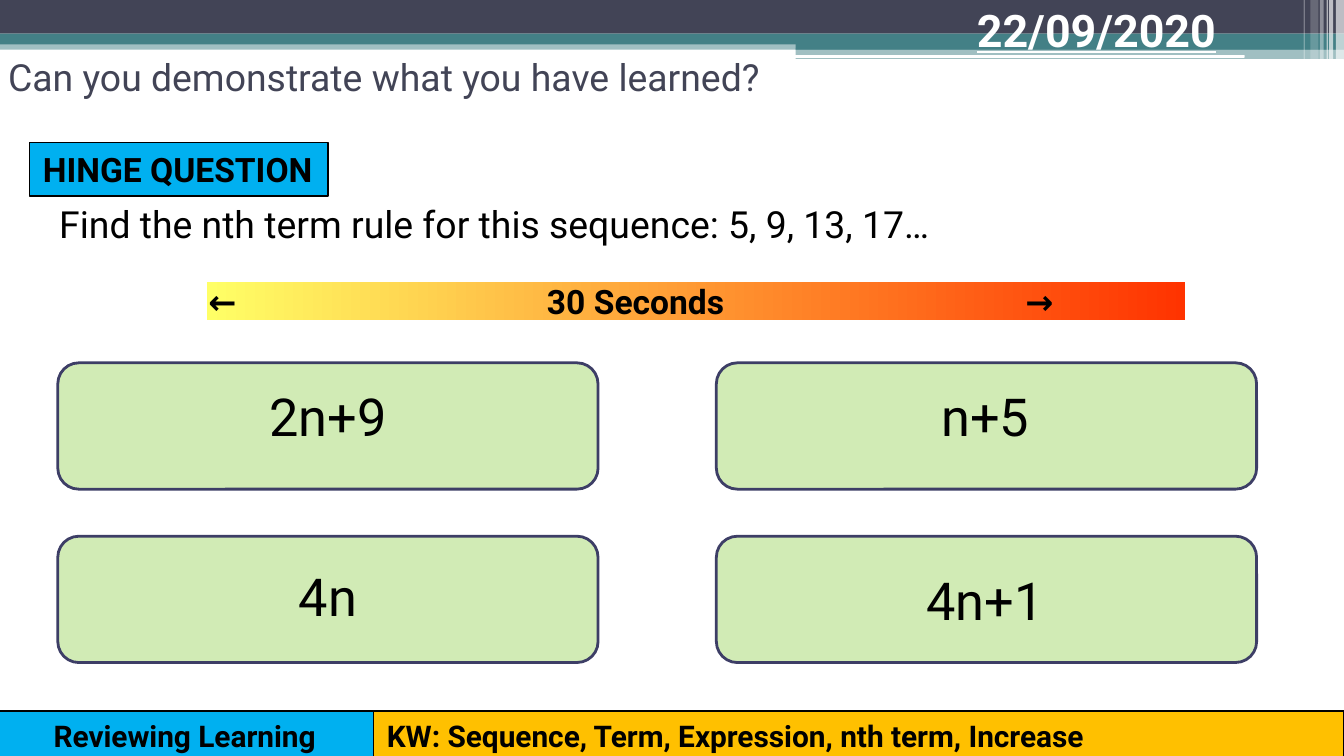
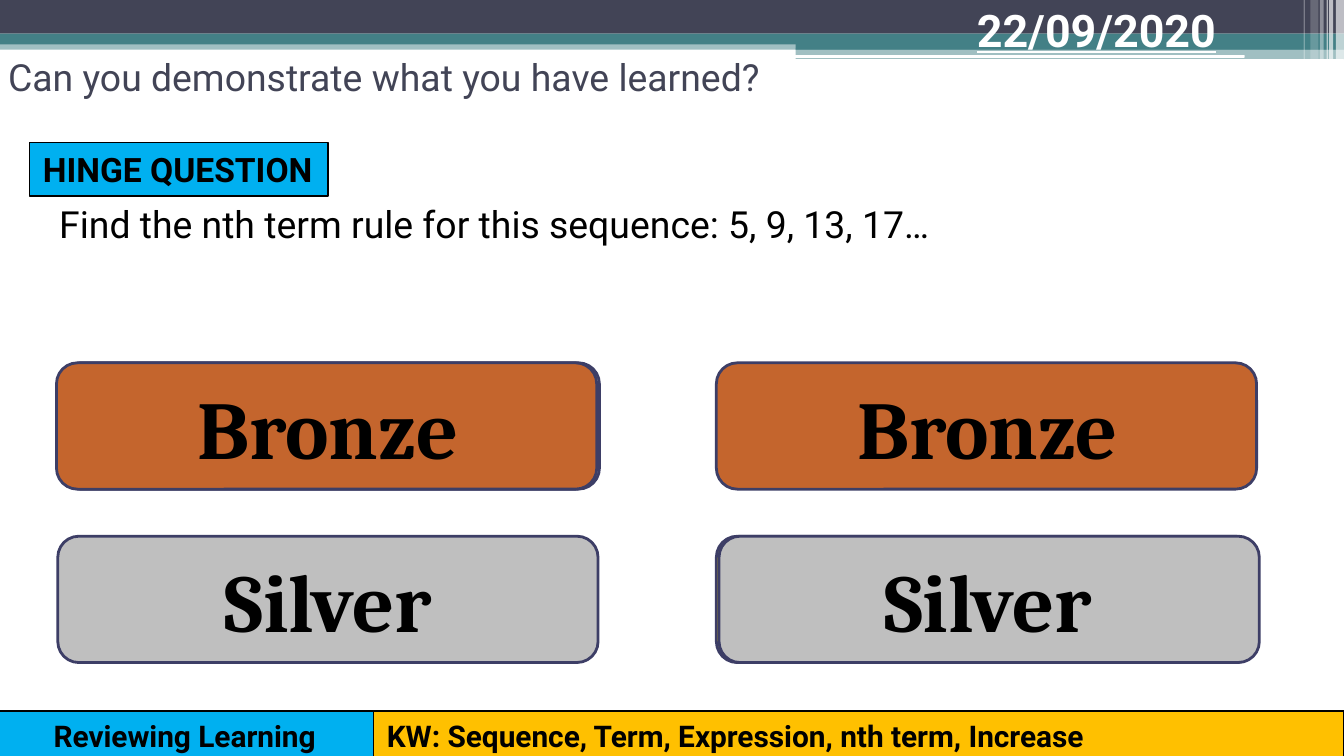
import pptx
import pptx.dml.color
import pptx.enum.shapes
import pptx.enum.text
import pptx.oxml.ns
import pptx.util
import lxml.etree

PX = 9144  # one px is a hundredth of an inch
RECT = pptx.enum.shapes.MSO_SHAPE.RECTANGLE
ROUND = pptx.enum.shapes.MSO_SHAPE.ROUNDED_RECTANGLE
LEFT = pptx.enum.text.PP_ALIGN.LEFT
MID = pptx.enum.text.PP_ALIGN.CENTER
TOP = pptx.enum.text.MSO_ANCHOR.TOP
CENTER = pptx.enum.text.MSO_ANCHOR.MIDDLE

# Shared colours and fonts
BLACK, WHITE = "000000", "FFFFFF"
SLATE, TEAL, NAVY = "424456", "438086", "3D3E66"
BLUE, AMBER, GREEN = "00B0F0", "FFC000", "92D050"
BRONZE, SILVER, GOLD = "C4652D", "BFBFBF", "D5B809"
SANS, SERIF = "Roboto", "Cambria"

# Header stripes: left, top, width, height, colour, opacity in percent
BANDS = [
    (0, 30, 1000, 7, TEAL, 50),
    (0, 0, 1000, 25, SLATE, 100),
    (0, 25, 1000, 8, TEAL, 100),
    (592, 30, 408, 7, TEAL, 100),
    (592, 36, 408, 15, TEAL, 50),
]
# Upright stripes at the right end: left, width, height, opacity
BARS = [(994, 6, 51, 65), (989, 3, 51, 65), (987, 1, 51, 60),
        (982, 3, 51, 40), (975, 6, 48, 20), (970, 1, 48, 30)]

# Answer cards
LEFTS, TOPS = (43, 533), (270, 399)
WIDE, HIGH = 402, 94


def emu(*nums):
    return [pptx.util.Emu(num * PX) for num in nums]


def rgb(code):
    return pptx.dml.color.RGBColor.from_string(code)


def node(parent, tag, **attrs):
    item = lxml.etree.SubElement(parent, pptx.oxml.ns.qn(tag))
    for key, val in attrs.items():
        item.set(key, str(val))
    return item


def write(frame, text, size, color=BLACK, face=SANS, bold=False,
          align=LEFT, anchor=TOP):
    """Fill a text frame with one evenly formatted paragraph."""
    frame.word_wrap = True
    frame.auto_size = pptx.enum.text.MSO_AUTO_SIZE.NONE
    frame.vertical_anchor = anchor
    para = frame.paragraphs[0]
    para.text = text
    para.alignment = align
    font = para.font
    font.size, font.name, font.bold = pptx.util.Pt(size), face, bold
    font.color.rgb = rgb(color)
    return para


def block(slide, box, fill, line=None, width=0.75, kind=RECT, alpha=100):
    shape = slide.shapes.add_shape(kind, *emu(*box))
    shape.shadow.inherit = False
    shape.fill.solid()
    shape.fill.fore_color.rgb = rgb(fill)
    if alpha < 100:
        solid = shape.fill.fore_color._xFill
        node(solid[0], "a:alpha", val=alpha * 1000)
    if line:
        shape.line.color.rgb = rgb(line)
        shape.line.width = pptx.util.Pt(width)
    else:
        shape.line.fill.background()
    return shape


def label(slide, box, text, size, **style):
    shape = slide.shapes.add_textbox(*emu(*box))
    return write(shape.text_frame, text, size, **style)


def tag(slide, box, fill, text, size, align=LEFT):
    shape = block(slide, box, fill, BLACK)
    write(shape.text_frame, text, size, bold=True, align=align)


def card(slide, left, top, fill, alpha=100):
    block(slide, (left, top, WIDE, HIGH), fill, NAVY, 1.5, ROUND, alpha)


def place(holder, *box):
    holder.left, holder.top, holder.width, holder.height = emu(*box)


def header(slide, layout):
    """Draw the header stripes and move them onto the layout."""
    parts = [block(slide, band[:4], band[4], alpha=band[5]) for band in BANDS]
    parts.append(block(slide, (591, 41, 335, 2), WHITE, kind=ROUND))
    parts += [block(slide, (left, 0, wide, high), WHITE, alpha=alpha)
              for left, wide, high, alpha in BARS]
    for part in parts:
        layout.shapes._spTree.append(part._element)


def frame(slide):
    """Add the title, question, date and footer that every slide has."""
    title, body = slide.placeholders
    place(title, -4, 13, 900, 88)
    write(title.text_frame, "Can you demonstrate what you have learned?",
          20, color=SLATE, anchor=CENTER)

    place(body, 22, 145, 950, 316)
    para = write(body.text_frame,
                 "Find the nth term rule for this sequence: 5, 9, 13, 17…", 20)
    para.space_before = pptx.util.Pt(3)
    props = para._p.get_or_add_pPr()
    props.set("marL", str(12 * PX))
    props.set("indent", "0")
    plain = node(props, "a:buNone")
    props.insert_element_before(plain, "a:defRPr")

    date = label(slide, (717, -3, 295, 40), "22/09/2020", 24,
                 color=WHITE, bold=True)
    date.font.underline = True

    tag(slide, (-3, 529, 281, 37), BLUE, "Reviewing Learning", 16, MID)
    tag(slide, (278, 529, 722, 37), AMBER,
        "KW: Sequence, Term, Expression, nth term, Increase", 16)
    block(slide, (587, 45, 413, 31), WHITE, WHITE, 1.5)
    tag(slide, (22, 106, 222, 40), BLUE, "HINGE QUESTION", 18)


def timer(slide):
    bar = block(slide, (154, 210, 728, 28), WHITE)
    bar.fill.gradient()
    bar.fill.gradient_angle = 0
    for stop, color in zip(bar.fill.gradient_stops, ("FFFF66", "FF3300")):
        stop.color.rgb = rgb(color)

    # Tab stops set the caption and the right arrow
    shape = slide.shapes.add_textbox(*emu(155, 204, 743, 40))
    para = write(shape.text_frame, "←\t30 Seconds\t→", 18, bold=True)
    shape.text_frame.margin_left = 0
    props = para._p.get_or_add_pPr()
    tabs = node(props, "a:tabLst")
    for pos in (252, 608):
        node(tabs, "a:tab", pos=pos * PX, algn="l")
    props.insert_element_before(tabs, "a:defRPr")


def choices(slide):
    for left in LEFTS:
        for top in TOPS:
            card(slide, left, top, GREEN, 42)
    for left, top, text in ((67, 281, "2n+9"), (556, 281, "n+5"),
                            (67, 415, "4n"), (556, 418, "4n+1")):
        label(slide, (left, top, 354, 57), text, 28, align=MID)


def medals(slide):
    # Cards whose rims show behind the front ones
    card(slide, 44, TOPS[0], SILVER)
    card(slide, 533, TOPS[1], GOLD)
    for left, top, fill, text, start in (
            (42, TOPS[0], BRONZE, "Bronze", 67),
            (533, TOPS[0], BRONZE, "Bronze", 558),
            (43, TOPS[1], SILVER, "Silver", 67),
            (535, TOPS[1], SILVER, "Silver", 558)):
        card(slide, left, top, fill)
        label(slide, (start, top + 6, 354, 84), text, 44,
              face=SERIF, bold=True, align=MID)


def main():
    deck = pptx.Presentation()
    deck.slide_width = pptx.util.Emu(1000 * PX)
    deck.slide_height = pptx.util.Emu(deck.slide_width * 9 // 16)
    layout = deck.slide_layouts[1]

    # Slide 1: question with four answers
    quiz = deck.slides.add_slide(layout)
    header(quiz, layout)
    frame(quiz)
    choices(quiz)
    timer(quiz)

    # Slide 2: medal for each answer
    award = deck.slides.add_slide(layout)
    frame(award)
    medals(award)

    deck.save("out.pptx")


if __name__ == "__main__":
    main()
